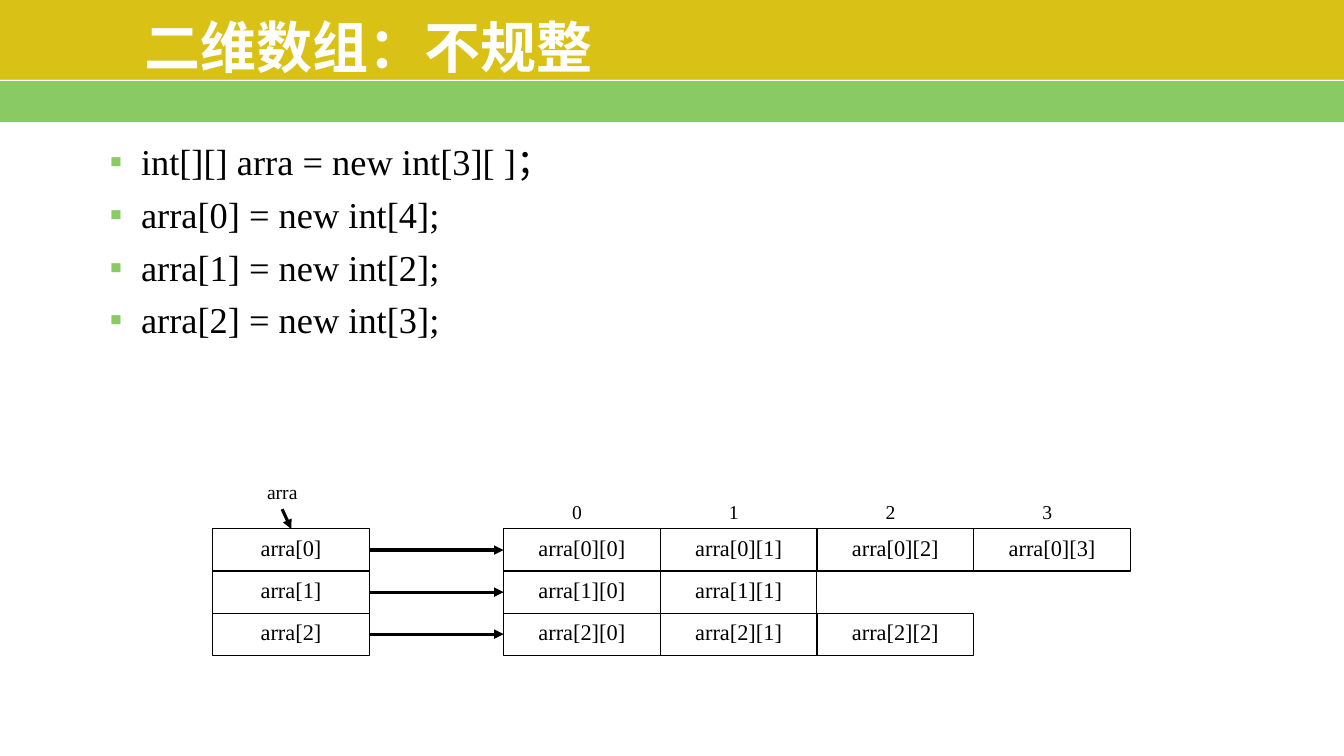
import pptx
import pptx.dml.color
import pptx.enum.shapes
import pptx.enum.text
import pptx.oxml
import pptx.oxml.ns
import pptx.util
from lxml import etree

Cm = pptx.util.Cm
Pt = pptx.util.Pt
RGBColor = pptx.dml.color.RGBColor
ALIGN = pptx.enum.text.PP_ALIGN
ANCHOR = pptx.enum.text.MSO_ANCHOR
NO_AUTOFIT = pptx.enum.text.MSO_AUTO_SIZE.NONE
RECTANGLE = pptx.enum.shapes.MSO_SHAPE.RECTANGLE
STRAIGHT = pptx.enum.shapes.MSO_CONNECTOR.STRAIGHT
qn = pptx.oxml.ns.qn

COLORS = {"gold": "D9C215", "green": "89CA64", "white": "FFFFFF", "black": "000000"}
SERIF = "Times New Roman"
SANS = "Noto Sans CJK SC"
SLIDE_WIDTH, SLIDE_HEIGHT = 33.87, 19.05


def write(paragraph, text, color="black", **font_values):
    """Add one run and apply the font values to it."""
    run = paragraph.add_run()
    run.text = text
    for name, value in font_values.items():
        setattr(run.font, name, value)
    run.font.color.rgb = RGBColor.from_string(COLORS[color])
    return run


def add_line(start, end, color, width, arrow=False):
    line = slide.shapes.add_connector(STRAIGHT, *[Cm(value) for value in start + end])
    line.line.color.rgb = RGBColor.from_string(COLORS[color])
    line.line.width = Pt(width)
    if arrow:
        etree.SubElement(line.line._get_or_add_ln(), qn("a:tailEnd"), type="triangle")
    etree.SubElement(line._element.spPr, qn("a:effectLst"))


presentation = pptx.Presentation()
presentation.slide_width = Cm(SLIDE_WIDTH)
presentation.slide_height = Cm(SLIDE_HEIGHT)
slide = presentation.slides.add_slide(presentation.slide_layouts[1])
title, body = slide.placeholders

# Header bands
for color, top, height in [("green", 2.01, 1.07), ("gold", 0, 2.01)]:
    band = slide.shapes.add_shape(RECTANGLE, 0, Cm(top), Cm(SLIDE_WIDTH), Cm(height))
    band.shadow.inherit = False
    band.fill.solid()
    band.fill.fore_color.rgb = RGBColor.from_string(COLORS[color])
    band.line.fill.background()
add_line((0, 2.03), (SLIDE_WIDTH, 2.03), "white", 1)

# Title and statements, in front of the bands
for placeholder, box, anchor in [
    (title, (3.39, 0.48, 26.25, 1.35), ANCHOR.MIDDLE),
    (body, (1.24, 3.38, 31.6, 14.6), ANCHOR.TOP),
]:
    slide.shapes._spTree.append(placeholder._element)
    placeholder.left, placeholder.top, placeholder.width, placeholder.height = map(Cm, box)
    placeholder.text_frame.auto_size = NO_AUTOFIT
    placeholder.text_frame.vertical_anchor = anchor

heading = title.text_frame.paragraphs[0]
heading.alignment = ALIGN.LEFT
heading_run = write(heading, "二维数组：不规整", "white", name=SANS, size=Pt(40), bold=True)
etree.SubElement(heading_run._r.get_or_add_rPr(), qn("a:ea"), typeface=SANS)

statements = [
    "int[][] arra = new int[3][ ]；",
    "arra[0] = new int[4];",
    "arra[1] = new int[2];",
    "arra[2] = new int[3];",
]
for index, statement in enumerate(statements):
    paragraph = body.text_frame.add_paragraph() if index else body.text_frame.paragraphs[0]
    paragraph.level = 1
    properties = paragraph._p.get_or_add_pPr()
    properties.set("marL", str(Cm(2.06)))
    properties.set("indent", str(Cm(-0.79)))
    bullet_color = etree.SubElement(properties, qn("a:buClr"))
    etree.SubElement(bullet_color, qn("a:srgbClr"), val=COLORS["green"])
    etree.SubElement(properties, qn("a:buChar"), char="▪")
    paragraph.space_before = Pt(6.5 if index else 0)
    write(paragraph, statement, name=SERIF, size=Pt(26))

# Array diagram: one reference cell per row, pointing at a row of its own length
CELL_WIDTH, CELL_HEIGHT = 3.95, 1.06
REFERENCE_LEFT, ELEMENT_LEFT, GRID_TOP = 5.36, 12.69, 13.33
row_lengths = [4, 2, 3]

for row, length in enumerate(row_lengths):
    top = GRID_TOP + row * CELL_HEIGHT
    cells = [(REFERENCE_LEFT, f"arra[{row}]")]
    for column in range(length):
        cells.append((ELEMENT_LEFT + column * CELL_WIDTH, f"arra[{row}][{column}]"))
    for left, text in cells:
        cell = slide.shapes.add_shape(
            RECTANGLE, Cm(left), Cm(top), Cm(CELL_WIDTH), Cm(CELL_HEIGHT))
        cell.shadow.inherit = False
        cell.fill.solid()
        cell.fill.fore_color.rgb = RGBColor.from_string(COLORS["white"])
        cell.line.color.rgb = RGBColor.from_string(COLORS["black"])
        cell.line.width = Pt(0.75)
        cell.text_frame.vertical_anchor = ANCHOR.TOP
        paragraph = cell.text_frame.paragraphs[0]
        paragraph.alignment = ALIGN.CENTER
        write(paragraph, text, name=SERIF, size=Pt(16))
    middle = top + CELL_HEIGHT / 2
    add_line((REFERENCE_LEFT + CELL_WIDTH, middle), (ELEMENT_LEFT, middle), "black", 2.25, True)

labels = [("arra", 6.48, 11.96, 1.3)]
for column in range(max(row_lengths)):
    labels.append((str(column), 14.17 + column * CELL_WIDTH, 12.47, 0.76))
for text, left, top, width in labels:
    label = slide.shapes.add_textbox(Cm(left), Cm(top), Cm(width), Cm(0.86))
    label.text_frame.word_wrap = False
    write(label.text_frame.paragraphs[0], text, name=SERIF, size=Pt(14))
add_line((7.11, 12.83), (7.34, GRID_TOP), "black", 2.25, True)

presentation.save("out.pptx")
